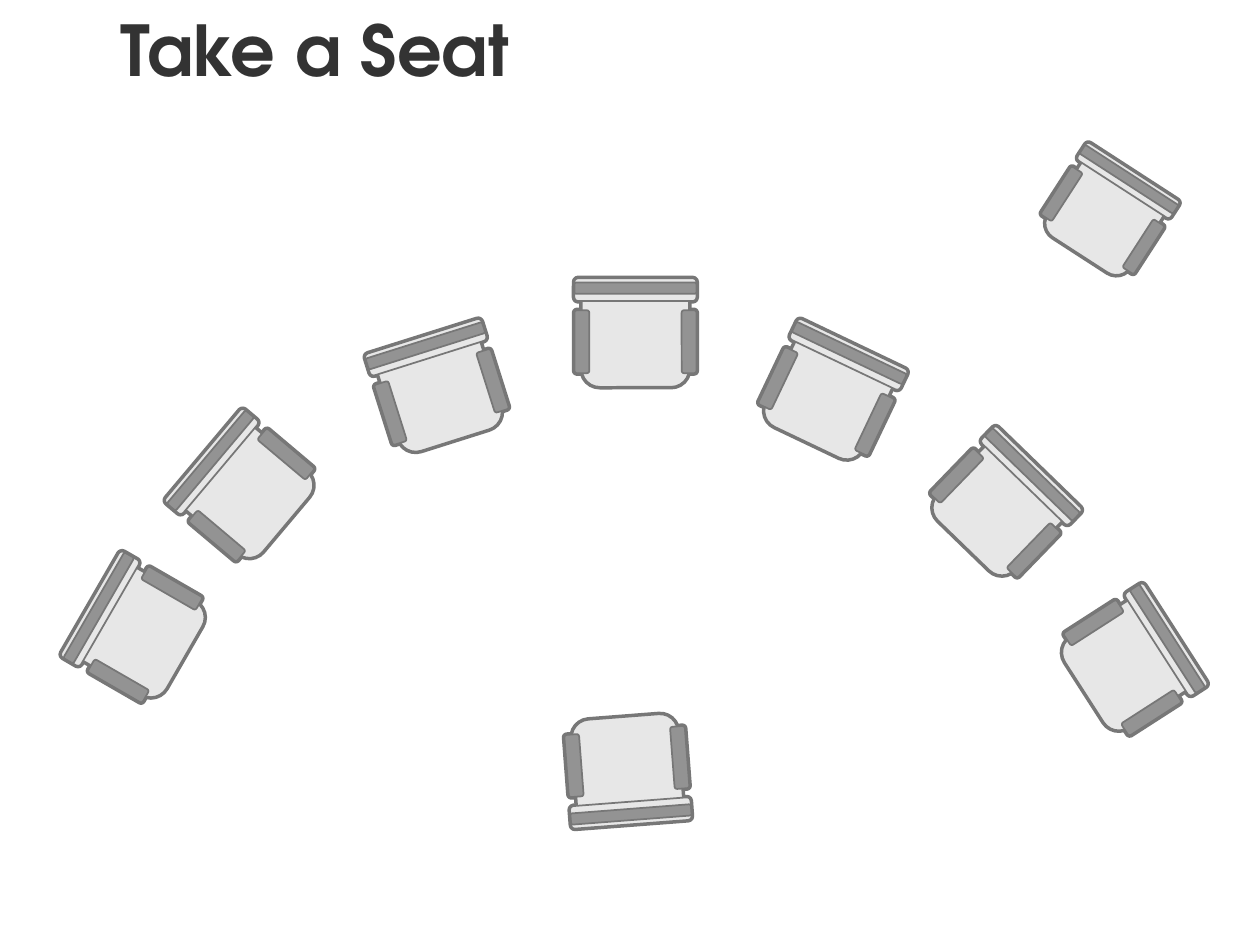
"""Build the "Take a Seat" slide: an arc of armchairs seen from above."""
import math

import pptx
import pptx.dml.color
import pptx.enum.shapes
import pptx.enum.text
import pptx.util

Cm = pptx.util.Cm
Pt = pptx.util.Pt

TITLE = "Take a Seat"

THEME = {
    "font": "TeX Gyre Adventor",
    "title_size": 40,
    "paper": "FFFFFF",
    "ink": "333333",
    "outline": "777777",
    "cushion": "E7E7E7",
    "trim": "939393",
    "heavy": 3,
    "fine": 1,
}

# (centre x, centre y, rotation, scale)
CHAIRS = [
    (2.78, 12.71, 300, 1),
    (16.73, 7.94, 25.5, 1),
    (12.81, 6.72, 0, 1),
    (22.31, 4.31, 32.9, 0.91),
    (12.65, 15.52, 175.6, 0.99),
    (8.85, 7.84, 342.5, 1),
    (20.18, 10.22, 44.1, 1),
    (4.94, 9.87, 310.1, 1),
    (22.77, 13.37, 57.3, 1),
]

# (offset x, offset y, width, height, turn, fill)
FRAME = [
    (0, 0, 2.16, 2.16, 0, "cushion"),
    (0, -0.88, 2.46, 0.46, 0, "cushion"),
    (1.08, 0.17, 1.27, 0.3, 90, "trim"),
    (-1.08, 0.17, 1.27, 0.3, 90, "trim"),
]
STRIPE = (0, -0.91, 2.46, 0.23, 0, "trim")
LAYERS = [("heavy", FRAME), ("fine", FRAME + [STRIPE])]


def color(name):
    return pptx.dml.color.RGBColor.from_string(THEME[name])


def add_title(page):
    box = page.shapes.title
    box.left, box.top, box.width, box.height = Cm(0), Cm(0), Cm(12.7), Cm(1.96)
    box.fill.solid()
    box.fill.fore_color.rgb = color("paper")
    frame = box.text_frame
    frame.text = TITLE
    frame.word_wrap = True
    frame.vertical_anchor = pptx.enum.text.MSO_ANCHOR.MIDDLE
    para = frame.paragraphs[0]
    para.alignment = pptx.enum.text.PP_ALIGN.CENTER
    para.font.name = THEME["font"]
    para.font.size = Pt(THEME["title_size"])
    para.font.bold = True
    para.font.color.rgb = color("ink")


def add_part(group, chair, part, weight):
    center_x, center_y, rotation, scale = chair
    offset_x, offset_y, width, height, turn, fill = part
    angle = math.radians(rotation)
    width, height = width * scale, height * scale
    x = center_x + scale * (offset_x * math.cos(angle) - offset_y * math.sin(angle))
    y = center_y + scale * (offset_x * math.sin(angle) + offset_y * math.cos(angle))
    shape = group.shapes.add_shape(
        pptx.enum.shapes.MSO_SHAPE.ROUNDED_RECTANGLE,
        Cm(x - width / 2), Cm(y - height / 2), Cm(width), Cm(height),
    )
    shape.rotation = (rotation + turn) % 360
    shape.shadow.inherit = False
    shape.fill.solid()
    shape.fill.fore_color.rgb = color(fill)
    shape.line.color.rgb = color("outline")
    shape.line.width = Pt(THEME[weight])


def add_chair(page, chair):
    group = page.shapes.add_group_shape()
    for weight, parts in LAYERS:
        for part in parts:
            add_part(group, chair, part, weight)


def main():
    deck = pptx.Presentation()
    deck.slide_width, deck.slide_height = Cm(25.4), Cm(19.05)
    page = deck.slides.add_slide(deck.slide_layouts[5])
    page.background.fill.solid()
    page.background.fill.fore_color.rgb = color("paper")
    add_title(page)
    for chair in CHAIRS:
        add_chair(page, chair)
    deck.save("out.pptx")


if __name__ == "__main__":
    main()
